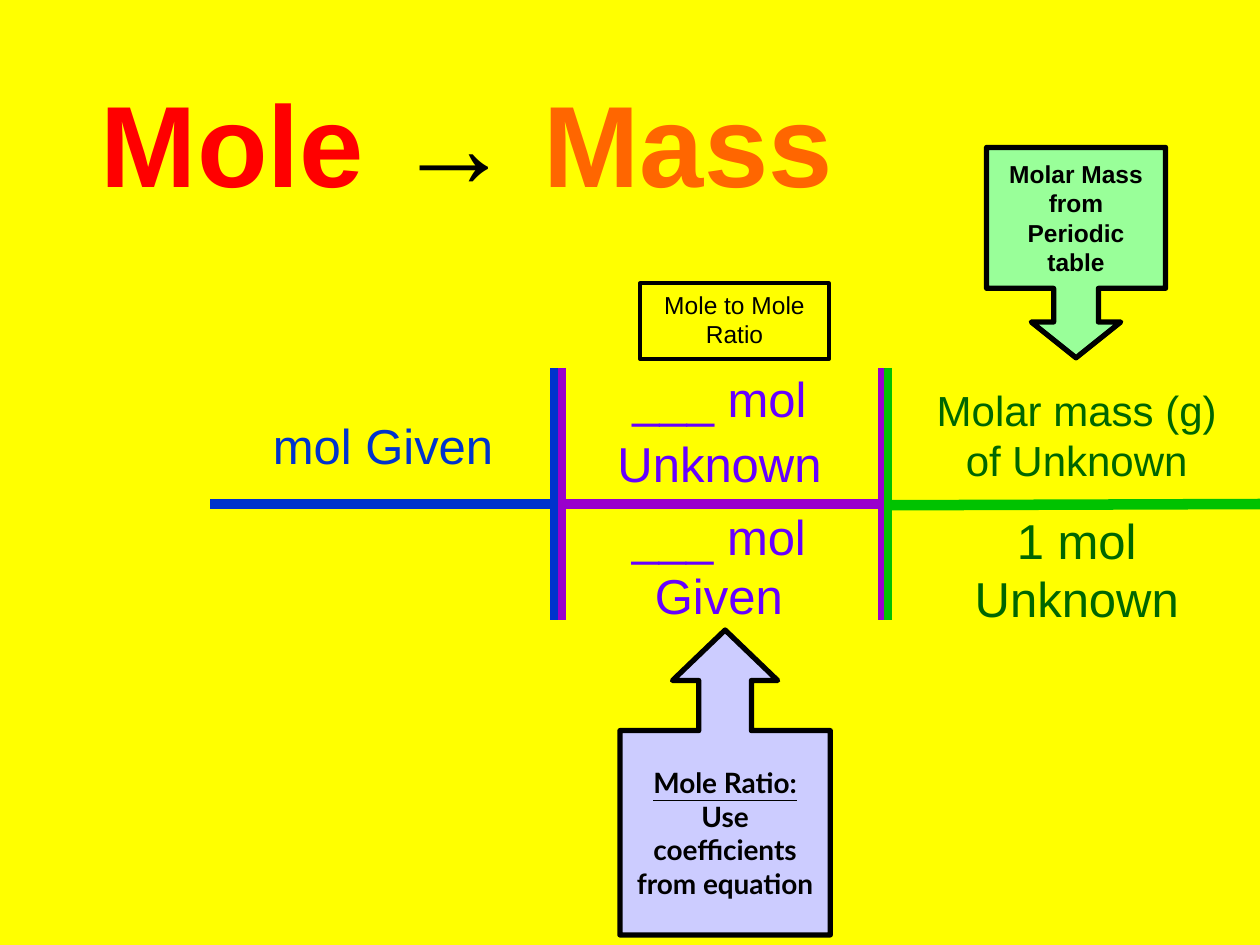
from lxml import etree
from pptx import Presentation
from pptx.dml.color import RGBColor
from pptx.enum.shapes import MSO_CONNECTOR, MSO_SHAPE
from pptx.enum.text import MSO_ANCHOR, PP_ALIGN
from pptx.oxml.ns import qn
from pptx.util import Inches, Pt

STRAIGHT = MSO_CONNECTOR.STRAIGHT
RECTANGLE = MSO_SHAPE.RECTANGLE
DOWN_CALLOUT = MSO_SHAPE.DOWN_ARROW_CALLOUT
UP_CALLOUT = MSO_SHAPE.UP_ARROW_CALLOUT
TOP, MIDDLE = MSO_ANCHOR.TOP, MSO_ANCHOR.MIDDLE
CENTER = PP_ALIGN.CENTER
TITLE_ONLY = 5

YELLOW, BLACK, RED, ORANGE = "FFFF00", "000000", "FF0000", "FF6600"
BLUE, PURPLE, GREEN = "0033CC", "9900CC", "00C200"
VIOLET, DARK_GREEN = "6600FF", "006600"
MINT, LAVENDER = "99FF99", "CCCCFF"


def color(hex_string):
    return RGBColor.from_string(hex_string)


class SlideBuilder:
    font_name = "Arial"

    def __init__(self, presentation, background):
        self.slide = presentation.slides.add_slide(presentation.slide_layouts[TITLE_ONLY])
        fill = self.slide.background.fill
        fill.solid()
        fill.fore_color.rgb = color(background)

    def set_text(self, shape, runs, size, anchor=TOP, bold=False, font_name=None, spacing=None):
        """Fill a shape with one centred paragraph of (text, colour) runs."""
        frame = shape.text_frame
        frame.word_wrap = True
        frame.vertical_anchor = anchor
        paragraph = frame.paragraphs[0]
        paragraph.alignment = CENTER
        if spacing:
            paragraph.line_spacing = spacing
        paragraph.font.size = Pt(size)
        paragraph.font.name = font_name or self.font_name
        paragraph.font.bold = bold
        for text, run_color in runs:
            run = paragraph.add_run()
            run.text = text
            run.font.color.rgb = color(run_color)
        return paragraph

    def title(self, box, runs, size):
        title = self.slide.shapes.title
        title.left, title.top, title.width, title.height = map(Inches, box)
        self.set_text(title, runs, size, MIDDLE, bold=True)

    def text(self, box, text, size, text_color, spacing=None):
        text_box = self.slide.shapes.add_textbox(*map(Inches, box))
        self.set_text(text_box, [(text, text_color)], size, spacing=spacing)

    def box(self, kind, box, fill, line_width, adjustments=()):
        shape = self.slide.shapes.add_shape(kind, *map(Inches, box))
        shape.shadow.inherit = False
        for index, value in enumerate(adjustments):
            shape.adjustments[index] = value
        if fill:
            shape.fill.solid()
            shape.fill.fore_color.rgb = color(fill)
        else:
            shape.fill.background()
        shape.line.color.rgb = color(BLACK)
        shape.line.width = Pt(line_width)
        return shape

    def line(self, start, end, line_color, width):
        line = self.slide.shapes.add_connector(STRAIGHT, *map(Inches, start + end))
        line.line.color.rgb = color(line_color)
        line.line.width = Pt(width)
        etree.SubElement(line._element.spPr, qn("a:effectLst"))


def main():
    presentation = Presentation()
    presentation.slide_width, presentation.slide_height = Inches(10), Inches(7.5)
    builder = SlideBuilder(presentation, YELLOW)

    # Title
    builder.title((0.33, 0.08, 6.75, 2.08),
                  [("Mole ", RED), ("→", BLACK), (" Mass", ORANGE)], 66)

    # Molar mass callout
    molar_mass = builder.box(DOWN_CALLOUT, (7.83, 1.17, 1.42, 1.67), MINT, 3,
                             (0.25, 0.25, 0.2, 0.67))
    builder.set_text(molar_mass, [("Molar Mass from Periodic table", BLACK)], 14, MIDDLE,
                     bold=True)

    # Conversion grid: column dividers, then the fraction bars
    for x, line_color in ((4.4, BLUE), (7, PURPLE), (7.05, GREEN), (4.46, PURPLE)):
        builder.line((x, 2.92), (x, 4.92), line_color, 4.5)
    for left, left_y, right, line_color in ((1.67, 4, 4.42, BLUE), (4.48, 4, 7, PURPLE),
                                            (7.06, 4.01, 10, GREEN)):
        builder.line((left, left_y), (right, 4), line_color, 6)

    # Ratio label
    ratio_label = builder.box(RECTANGLE, (5.08, 2.25, 1.5, 0.6), None, 2.25)
    builder.set_text(ratio_label, [("Mole to Mole Ratio", BLACK)], 14)

    # Quantities above and below the bars
    builder.text((1.83, 3.25, 2.42, 0.57), "mol Given", 28, BLUE)
    builder.text((4.5, 2.83, 2.42, 1.13), "___ mol Unknown", 28, VIOLET, spacing=1.1)
    builder.text((4.58, 3.97, 2.25, 1.03), "___ mol Given", 28, VIOLET)
    builder.text((7.17, 3, 2.75, 0.9), "Molar mass (g) of Unknown", 24, DARK_GREEN)
    builder.text((7.17, 4, 2.75, 1.03), "1 mol Unknown", 28, DARK_GREEN)

    # Mole ratio callout
    mole_ratio = builder.box(UP_CALLOUT, (4.92, 5, 1.67, 2.42), LAVENDER, 3,
                             (0.25, 0.25, 0.24, 0.67))
    paragraph = builder.set_text(mole_ratio, [("Mole Ratio:", BLACK),
                                              (" Use coefficients from equation", BLACK)],
                                 16, MIDDLE, bold=True, font_name="Lato")
    paragraph.runs[0].font.underline = True

    presentation.save("out.pptx")


if __name__ == "__main__":
    main()
